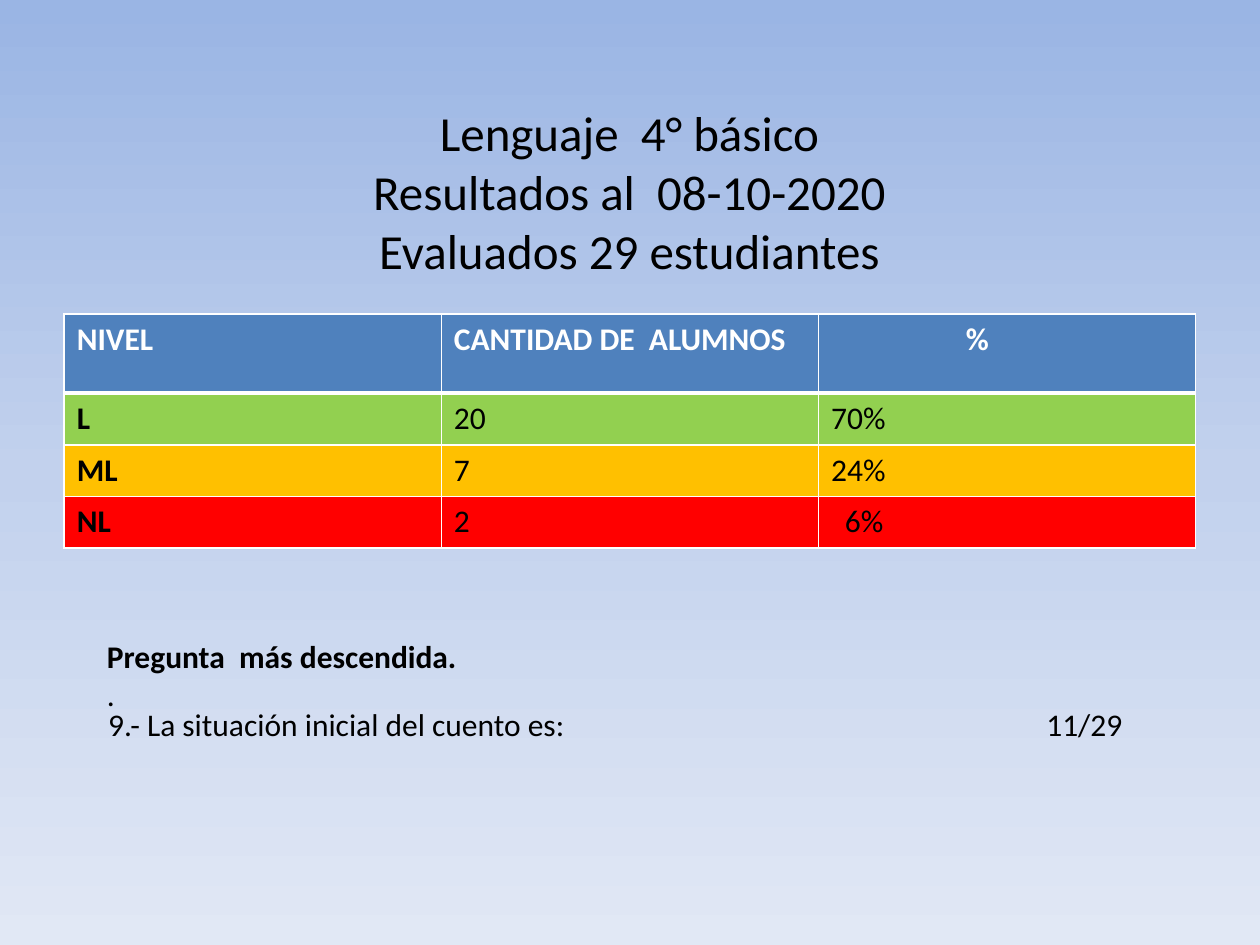
from dataclasses import dataclass

from pptx import Presentation
from pptx.dml.color import RGBColor as RGB
from pptx.enum.text import MSO_ANCHOR, PP_ALIGN
from pptx.oxml import parse_xml
from pptx.oxml.ns import nsdecls, qn
from pptx.oxml.xmlchemy import OxmlElement
from pptx.util import Inches, Pt


@dataclass(frozen=True)
class Theme:
    font: str = "Calibri"
    title_size: int = 28
    body_size: int = 18
    text: str = "000000"
    white: str = "FFFFFF"
    header: str = "4F81BD"
    green: str = "92D050"
    amber: str = "FFC000"
    red: str = "FF0000"
    background: tuple = ((0, "9AB5E4"), (50, "C2D1ED"), (100, "E1E8F5"))


THEME = Theme()


def add_run(paragraph, text, size=THEME.body_size, color=THEME.text, bold=False):
    run = paragraph.add_run()
    run.text = text
    run.font.name = THEME.font
    run.font.size = Pt(size)
    run.font.bold = bold
    run.font.color.rgb = RGB.from_string(color)


def set_background(slide):
    stops = "".join(
        f'<a:gs pos="{percent * 1000}"><a:srgbClr val="{color}"/></a:gs>'
        for percent, color in THEME.background
    )
    background = parse_xml(
        f'<p:bg {nsdecls("p", "a")}><p:bgPr><a:gradFill rotWithShape="1">'
        f'<a:gsLst>{stops}</a:gsLst><a:lin ang="5400000" scaled="0"/>'
        "</a:gradFill><a:effectLst/></p:bgPr></p:bg>"
    )
    slide.element.cSld.insert(0, background)


def set_title(slide, lines):
    title = slide.shapes.title
    title.left, title.top = Inches(0.5), Inches(0.3)
    title.width, title.height = Inches(8.99), Inches(2.43)
    frame = title.text_frame
    frame.vertical_anchor = MSO_ANCHOR.MIDDLE
    paragraph = frame.paragraphs[0]
    paragraph.alignment = PP_ALIGN.CENTER
    for index, line in enumerate(lines):
        if index:
            paragraph.add_line_break()
        add_run(paragraph, line, THEME.title_size)


def set_borders(cell, bottom_width):
    properties = cell._tc.get_or_add_tcPr()
    widths = {"a:lnL": 1, "a:lnR": 1, "a:lnT": 1, "a:lnB": bottom_width}
    for position, (tag, width) in enumerate(widths.items()):
        line = OxmlElement(tag)
        line.set("w", str(Pt(width)))
        fill = OxmlElement("a:solidFill")
        color = OxmlElement("a:srgbClr")
        color.set("val", THEME.white)
        fill.append(color)
        line.append(fill)
        properties.insert(position, line)


def add_results_table(slide, rows, fills, indents):
    frame = slide.shapes.add_table(
        len(rows), len(rows[0]), Inches(0.51), Inches(2.49), Inches(8.98), Inches(1.85)
    )
    table = frame.table
    for row_index, (values, fill) in enumerate(zip(rows, fills)):
        is_header = row_index == 0
        table.rows[row_index].height = Inches(0.63 if is_header else 0.41)
        for column_index, value in enumerate(values):
            cell = table.cell(row_index, column_index)
            cell.fill.solid()
            cell.fill.fore_color.rgb = RGB.from_string(fill)
            cell.margin_left = Inches(0.1 + indents.get(value, 0))
            set_borders(cell, 3 if is_header else 1)
            add_run(
                cell.text_frame.paragraphs[0],
                value,
                color=THEME.white if is_header else THEME.text,
                bold=is_header or column_index == 0,
            )


def add_text(slide, left, top, width, height, lines, right_tab=None):
    box = slide.shapes.add_textbox(
        Inches(left), Inches(top), Inches(width), Inches(height)
    )
    frame = box.text_frame
    frame.word_wrap = True
    for index, (text, bold) in enumerate(lines):
        paragraph = frame.add_paragraph() if index else frame.paragraphs[0]
        if right_tab:
            tabs = OxmlElement("a:tabLst")
            tab = OxmlElement("a:tab")
            tab.set("pos", str(Inches(right_tab)))
            tab.set("algn", "r")
            tabs.append(tab)
            paragraph._p.get_or_add_pPr().append(tabs)
        add_run(paragraph, text, bold=bold)


def main():
    presentation = Presentation()
    presentation.slide_width, presentation.slide_height = Inches(10), Inches(7.5)
    title_only = presentation.slide_layouts.get_by_name("Title Only")
    slide = presentation.slides.add_slide(title_only)
    set_background(slide)

    # Heading
    set_title(
        slide,
        ["Lenguaje  4° básico", "Resultados al  08-10-2020", "Evaluados 29 estudiantes"],
    )

    # Results by level
    add_results_table(
        slide,
        rows=[
            ("NIVEL", "CANTIDAD DE  ALUMNOS", "%"),
            ("L", "20", "70%"),
            ("ML", "7", "24%"),
            ("NL", "2", "6%"),
        ],
        fills=[THEME.header, THEME.green, THEME.amber, THEME.red],
        indents={"%": 1.07, "6%": 0.11},
    )

    # Weakest question
    add_text(
        slide, 0.75, 5.01, 3.39, 0.71, [("Pregunta  más descendida.", True), (".", False)]
    )
    add_text(
        slide, 0.76, 5.55, 8.5, 0.4,
        [("9.- La situación inicial del cuento es:\t11/29", False)],
        right_tab=8.05,
    )

    presentation.save("out.pptx")


if __name__ == "__main__":
    main()
